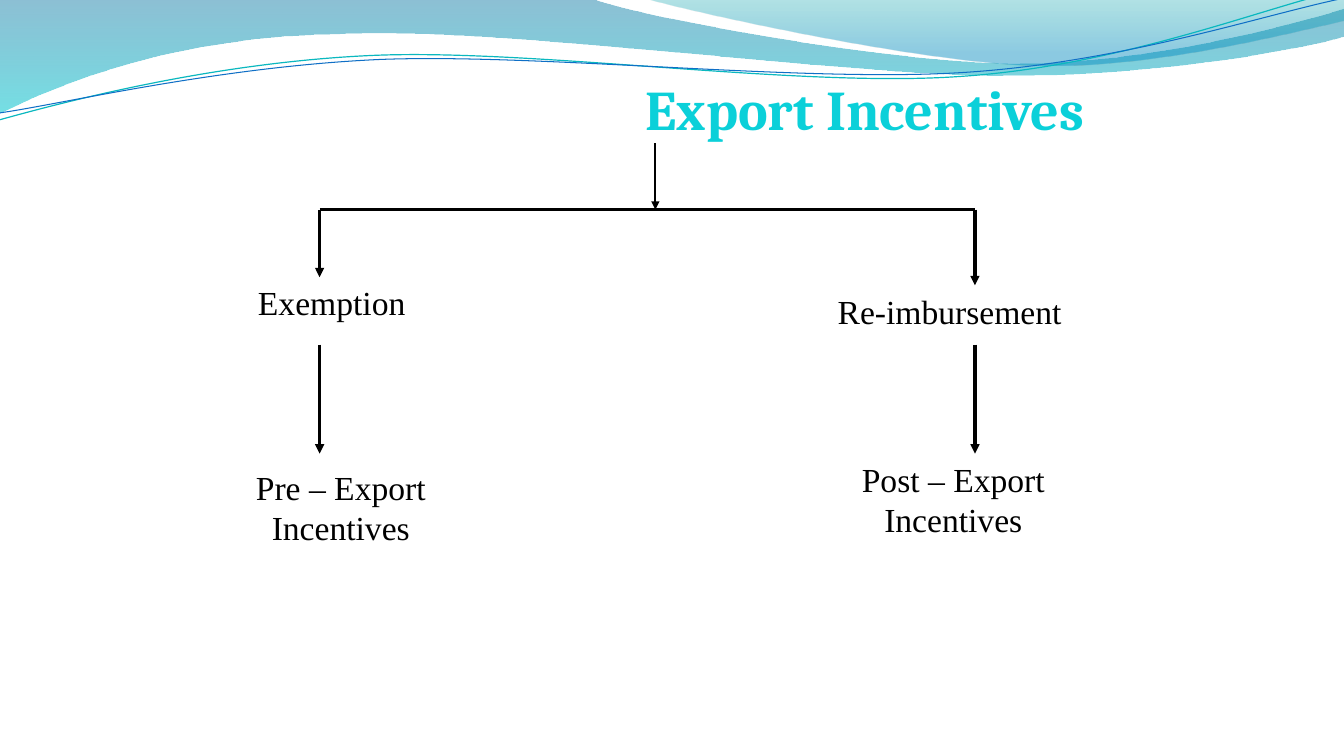
from pptx import Presentation
from pptx.dml.color import RGBColor
from pptx.enum.shapes import MSO_CONNECTOR
from pptx.enum.text import MSO_ANCHOR as Anchor, PP_ALIGN as Align
from pptx.oxml.ns import qn
from pptx.util import Inches, Pt
from lxml.etree import SubElement

BLACK = RGBColor(0x00, 0x00, 0x00)
TITLE_CYAN = RGBColor(0x0B, 0xD0, 0xD9)
TEAL_LINE = RGBColor(0x0A, 0xB8, 0xBF)
BLUE_LINE = RGBColor(0x0F, 0x6F, 0xC6)
DEEP_BLUE = RGBColor(0x00, 0x74, 0xA1)
AQUA = RGBColor(0x00, 0xC6, 0xCF)
SEA_GREEN = RGBColor(0x00, 0xA1, 0xA9)
SKY_BLUE = RGBColor(0x00, 0x8B, 0xBF)

STEM_X, BAR_Y = 6.5, 2.08

# Each wave lists its start, then segments: 2 numbers for a line, 6 for a curve.
# Gradient stops are (position, colour, opacity in percent).
RIBBONS = [
    ((0, 0),
     [(5.87, -0.01), (6.34, 0.17, 8.85, 0.63, 10.11, 0.63),
      (11.38, 0.63, 12.78, 0.26, 13.33, 0.09), (13.35, 0.36),
      (13.11, 0.44, 11.6, 0.76, 9.94, 0.75),
      (8.29, 0.75, 5.09, 0.28, 3.43, 0.34),
      (1.72, 0.36, 0.61, 0.83, -0.01, 1.13)],
     [(0, DEEP_BLUE, 45), (1, AQUA, 55)]),
    ((6.39, -0.01),
     [(6.79, 0.11, 9.09, 0.62, 10.25, 0.65),
      (11.41, 0.69, 12.82, 0.32, 13.33, 0.21), (13.33, 0)],
     [(0, SEA_GREEN, 30), (0.8, SKY_BLUE, 45)]),
]
STRANDS = [
    ((-0.01, 1.19),
     [(0.64, 1.01, 2.11, 0.62, 3.69, 0.55),
      (5.27, 0.48, 7.9, 0.87, 9.5, 0.76),
      (11.1, 0.66, 12.52, 0.08, 13.31, -0.1)], TEAL_LINE, 0.85),
    ((0, 1.12),
     [(0.63, 1.03, 2.18, 0.66, 3.78, 0.59),
      (5.37, 0.53, 7.96, 0.82, 9.55, 0.72),
      (11.15, 0.62, 12.55, 0.14, 13.34, -0.02)], BLUE_LINE, 0.75),
]
# Arrow x, end of the upper arrow, then (text, box) for both levels.
BRANCHES = [
    (3.17, 2.75, ("Exemption", (2.08, 2.75, 2.42, 0.51)),
     ("Pre – Export Incentives", (2.09, 4.58, 2.58, 0.91))),
    (9.67, 2.83, ("Re-imbursement ", (7.75, 2.84, 3.42, 0.51)),
     ("Post – Export Incentives", (8.08, 4.5, 2.75, 0.91))),
]


def bend_segments(wave, segments):
    """Turn the straight segments that have control points into Bézier curves."""
    lines = list(wave.element.iter(qn("a:lnTo")))
    for line, segment in zip(lines, segments):
        if len(segment) == 2:
            continue
        line.tag = qn("a:cubicBezTo")
        for child in list(line):
            line.remove(child)
        for x, y in zip(segment[::2], segment[1::2]):
            point = SubElement(line, qn("a:pt"))
            point.set("x", str(Inches(x) - wave.left))
            point.set("y", str(Inches(y) - wave.top))


def add_wave(slide, start, segments, close):
    builder = slide.shapes.build_freeform(*map(Inches, start))
    ends = [(Inches(segment[-2]), Inches(segment[-1])) for segment in segments]
    builder.add_line_segments(ends, close=close)
    wave = builder.convert_to_shape()
    wave.shadow.inherit = False
    bend_segments(wave, segments)
    return wave


def add_ribbon(slide, start, segments, stops):
    ribbon = add_wave(slide, start, segments, close=True)
    ribbon.line.fill.background()
    ribbon.fill.gradient()
    ribbon.fill.gradient_angle = 270
    for stop, (position, color, _) in zip(ribbon.fill.gradient_stops, stops):
        stop.position = position
        stop.color.rgb = color
    for tint, (_, _, opacity) in zip(ribbon.element.iter(qn("a:srgbClr")), stops):
        SubElement(tint, qn("a:alpha")).set("val", str(opacity * 1000))


def add_strand(slide, start, segments, color, width):
    strand = add_wave(slide, start, segments, close=False)
    strand.fill.background()
    strand.line.color.rgb = color
    strand.line.width = Pt(width)


def write_text(shape, text, size=24, font="Times New Roman", color=BLACK,
               bold=False, anchor=Anchor.TOP):
    frame = shape.text_frame
    frame.word_wrap = True
    frame.vertical_anchor = anchor
    para = frame.paragraphs[0]
    para.alignment = Align.CENTER
    span = para.add_run()
    span.text = text
    span.font.size = Pt(size)
    span.font.name = font
    span.font.bold = bold
    span.font.color.rgb = color


def add_label(slide, text, box):
    write_text(slide.shapes.add_textbox(*map(Inches, box)), text)


def add_line(slide, start, end, width=2.25, arrow=True):
    line = slide.shapes.add_connector(MSO_CONNECTOR.STRAIGHT, *map(Inches, start + end))
    line.line.color.rgb = BLACK
    line.line.width = Pt(width)
    if arrow:
        SubElement(line.element.spPr.find(qn("a:ln")), qn("a:tailEnd")).set("type", "triangle")
    SubElement(line.element.spPr, qn("a:effectLst"))


def set_title(slide, text, box):
    title = slide.shapes.title
    title.left, title.top, title.width, title.height = map(Inches, box)
    write_text(title, text, size=40, font="Cambria", color=TITLE_CYAN, bold=True,
               anchor=Anchor.MIDDLE)


def add_branch(slide, x, upper_end, category, incentive):
    add_line(slide, (x, BAR_Y), (x, upper_end))
    add_label(slide, *category)
    add_line(slide, (x, 3.42), (x, 4.5))
    add_label(slide, *incentive)


def add_header_waves(slide):
    for ribbon in RIBBONS:
        add_ribbon(slide, *ribbon)
    for strand in STRANDS:
        add_strand(slide, *strand)


def add_incentive_tree(slide):
    add_line(slide, (STEM_X, 1.42), (STEM_X, BAR_Y), width=1.5)
    add_line(slide, (BRANCHES[0][0], BAR_Y), (BRANCHES[-1][0], BAR_Y), arrow=False)
    for branch in BRANCHES:
        add_branch(slide, *branch)


def main():
    deck = Presentation()
    deck.slide_width, deck.slide_height = Inches(13.33), Inches(7.5)
    slide = deck.slides.add_slide(deck.slide_layouts[5])
    add_header_waves(slide)
    set_title(slide, "Export Incentives", (3.83, 0.67, 9.5, 0.8))
    add_incentive_tree(slide)
    deck.save("out.pptx")


if __name__ == "__main__":
    main()
